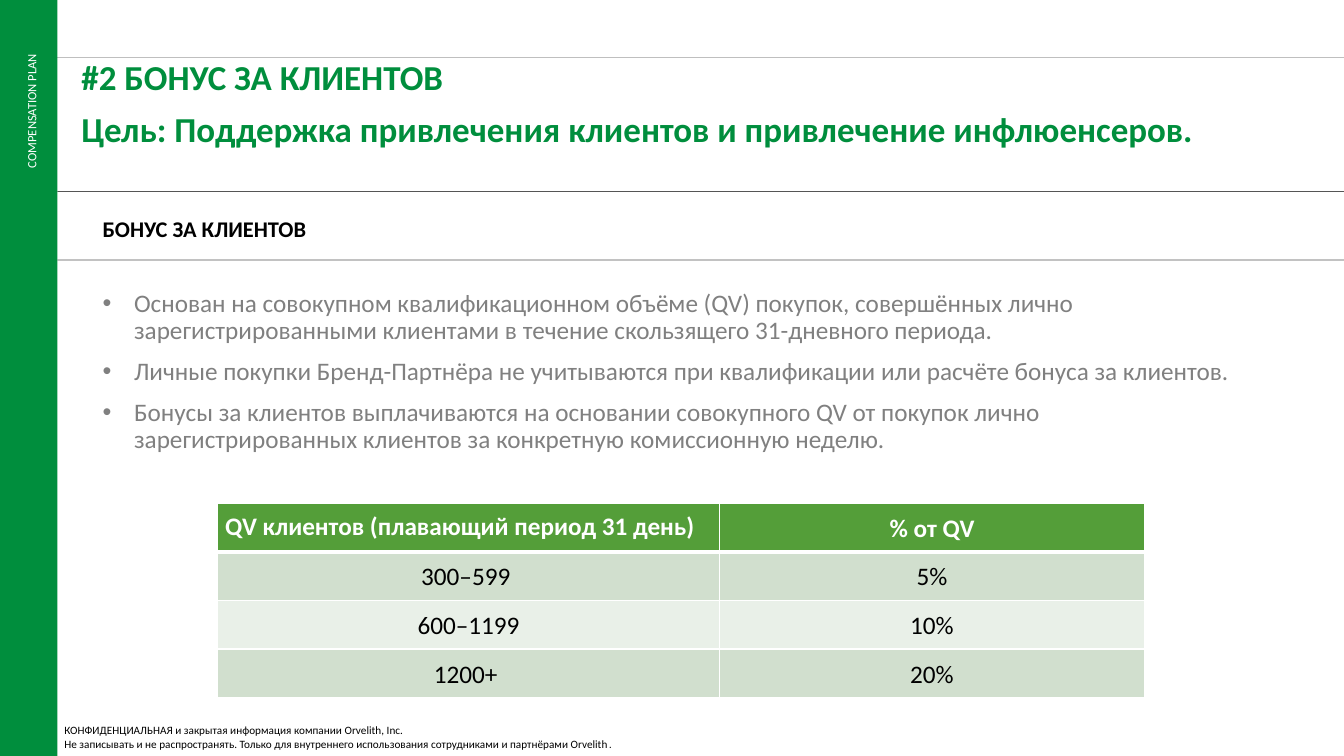
from lxml.etree import SubElement
from pptx import Presentation
from pptx.dml.color import RGBColor
from pptx.enum.shapes import MSO_CONNECTOR, MSO_SHAPE
from pptx.enum.text import MSO_ANCHOR, MSO_AUTO_SIZE, PP_ALIGN
from pptx.oxml.ns import qn
from pptx.util import Pt

COLORS = {
    "green": "008E3D", "header": "549E39", "band_dark": "D1DFCE",
    "band_light": "E9F0E8", "white": "FFFFFF", "black": "000000",
    "body": "808080", "rule": "0D0D0D", "rule_light": "BFBFBF",
}
WIDTH, HEIGHT = 960, 540
FONT = "Calibri"


def rgb(name):
    return RGBColor.from_string(COLORS[name])


def add_run(p, text, size, color, bold=False, font=FONT):
    r = p.add_run()
    r.text = text
    r.font.name = font
    r.font.size = Pt(size)
    r.font.bold = bold
    r.font.color.rgb = rgb(color)


def next_paragraph(tf, i):
    return tf.add_paragraph() if i else tf.paragraphs[0]


def setup_frame(sp, anchor=MSO_ANCHOR.TOP):
    tf = sp.text_frame
    tf.word_wrap = True
    tf.auto_size = MSO_AUTO_SIZE.NONE
    tf.vertical_anchor = anchor
    return tf


def add_frame(s, x, y, w, h):
    return setup_frame(s.shapes.add_textbox(Pt(x), Pt(y), Pt(w), Pt(h)))


def space(p, i):
    p.line_spacing = 0.9
    p.space_before = Pt(10 if i else 0)


def add_bullet(p, indent):
    pPr = p._p.get_or_add_pPr()
    pPr.set("marL", str(Pt(indent)))
    pPr.set("indent", str(Pt(-indent)))
    SubElement(pPr, qn("a:buFont"), typeface="Arial")
    SubElement(pPr, qn("a:buChar"), char="•")


def add_rule(s, x, y, w, color, alpha=100):
    line = s.shapes.add_connector(MSO_CONNECTOR.STRAIGHT, Pt(x), Pt(y), Pt(x + w), Pt(y))
    line.line.color.rgb = rgb(color)
    line.line.width = Pt(0.5)
    if alpha < 100:
        fill = line.line._ln.find(qn("a:solidFill"))
        SubElement(fill[0], qn("a:alpha"), val=str(alpha * 1000))
    SubElement(line._element.spPr, qn("a:effectLst"))


def add_sidebar(s, x, y, w, h):
    bar = s.shapes.add_shape(MSO_SHAPE.RECTANGLE, Pt(x), Pt(y), Pt(w), Pt(h))
    bar.shadow.inherit = False
    bar.fill.solid()
    bar.fill.fore_color.rgb = rgb("green")
    bar.line.fill.background()
    label_w, label_h = 118, 18
    label = s.shapes.add_textbox(
        Pt(x + 22.4 - label_w / 2), Pt(y + 90.4 - label_h / 2), Pt(label_w), Pt(label_h))
    label.rotation = 270
    p = setup_frame(label).paragraphs[0]
    p.alignment = PP_ALIGN.RIGHT
    add_run(p, "COMPENSATION PLAN", 9, "white")


def add_title(s, x, y, w, h, lines):
    title = s.shapes.title
    title.left, title.top, title.width, title.height = Pt(x), Pt(y), Pt(w), Pt(h)
    tf = setup_frame(title)
    for i, text in enumerate(lines):
        p = next_paragraph(tf, i)
        p.alignment = PP_ALIGN.LEFT
        space(p, i)
        add_run(p, text, 25, "green", bold=True)


def add_subtitle(s, x, y, w, h, text):
    p = add_frame(s, x, y, w, h).paragraphs[0]
    space(p, 0)
    add_run(p, text, 16, "black", bold=True)


def add_bullets(s, x, y, w, h, items):
    tf = add_frame(s, x, y, w, h)
    for i, text in enumerate(items):
        p = next_paragraph(tf, i)
        space(p, i)
        add_bullet(p, 22.5)
        add_run(p, text, 18, "body")


def add_borders(cell, header):
    tcPr = cell._tc.get_or_add_tcPr()
    for i, side in enumerate(("lnL", "lnR", "lnT", "lnB")):
        width = 3 if header and side == "lnB" else 1
        ln = tcPr.makeelement(qn(f"a:{side}"), {"w": str(Pt(width))})
        SubElement(SubElement(ln, qn("a:solidFill")), qn("a:srgbClr"), val=COLORS["white"])
        tcPr.insert(i, ln)


def add_bonus_table(s, x, y, col_widths, row_h, rows):
    frame = s.shapes.add_table(
        len(rows), len(col_widths), Pt(x), Pt(y), Pt(sum(col_widths)), Pt(row_h * len(rows)))
    table = frame.table
    for column, width in zip(table.columns, col_widths):
        column.width = Pt(width)
    for i, values in enumerate(rows):
        table.rows[i].height = Pt(row_h)
        header = i == 0
        fill = "header" if header else "band_dark" if i % 2 else "band_light"
        for j, text in enumerate(values):
            cell = table.cell(i, j)
            cell.fill.solid()
            cell.fill.fore_color.rgb = rgb(fill)
            cell.vertical_anchor = MSO_ANCHOR.MIDDLE
            cell.margin_left = cell.margin_right = Pt(5.4)
            cell.margin_top = cell.margin_bottom = Pt(5.4)
            p = cell.text_frame.paragraphs[0]
            if header and j == 0:
                p.alignment = PP_ALIGN.LEFT
            else:
                p.alignment = PP_ALIGN.CENTER
                p.line_spacing = 1.07
            add_run(p, text, 18, "white" if header else "black", bold=header)
            add_borders(cell, header)


def add_footer(s, x, y, w, h):
    tf = add_frame(s, x, y, w, h)
    add_run(tf.paragraphs[0],
            "КОНФИДЕНЦИАЛЬНАЯ и закрытая информация компании Orvelith, Inc.", 8, "black")
    p = tf.add_paragraph()
    add_run(p, "Не записывать и не распространять. Только для внутреннего использования "
               "сотрудниками и партнёрами Orvelith", 8, "black")
    add_run(p, ".", 8, "black", font="Arial")


def build_slide(prs):
    s = prs.slides.add_slide(prs.slide_layouts[5])
    bar_w = 41
    for y, color, alpha in ((185.8, "rule", 70), (136.8, "rule", 70), (41, "rule_light", 100)):
        add_rule(s, bar_w, y, WIDTH - bar_w, color, alpha)
    add_sidebar(s, 0, 0, bar_w, HEIGHT)
    add_bullets(s, 66.2, 203.8, 844, 140, [
        "Основан на совокупном квалификационном объёме (QV) покупок, совершённых лично "
        "зарегистрированными клиентами в течение скользящего 31-дневного периода.",
        "Личные покупки Бренд-Партнёра не учитываются при квалификации или расчёте "
        "бонуса за клиентов.",
        "Бонусы за клиентов выплачиваются на основании совокупного QV от покупок лично "
        "зарегистрированных клиентов за конкретную комиссионную неделю.",
    ])
    add_subtitle(s, 66.2, 152.6, 453.6, 25, "БОНУС ЗА КЛИЕНТОВ")
    add_title(s, 51, 39.6, 893.5, 86.4, [
        "#2 БОНУС ЗА КЛИЕНТОВ",
        "Цель: Поддержка привлечения клиентов и привлечение инфлюенсеров.",
    ])
    add_bonus_table(s, 155.5, 359.3, (358.5, 303.5), 34.8, [
        ("QV клиентов (плавающий период 31 день)", "% от QV"),
        ("300–599 ", "5%"),
        ("600–1199", "10%"),
        ("1200+ ", "20%"),
    ])
    add_footer(s, 38.9, 513.4, 481.7, 26.6)


def main():
    prs = Presentation()
    prs.slide_width, prs.slide_height = Pt(WIDTH), Pt(HEIGHT)
    build_slide(prs)
    prs.save("out.pptx")


if __name__ == "__main__":
    main()
